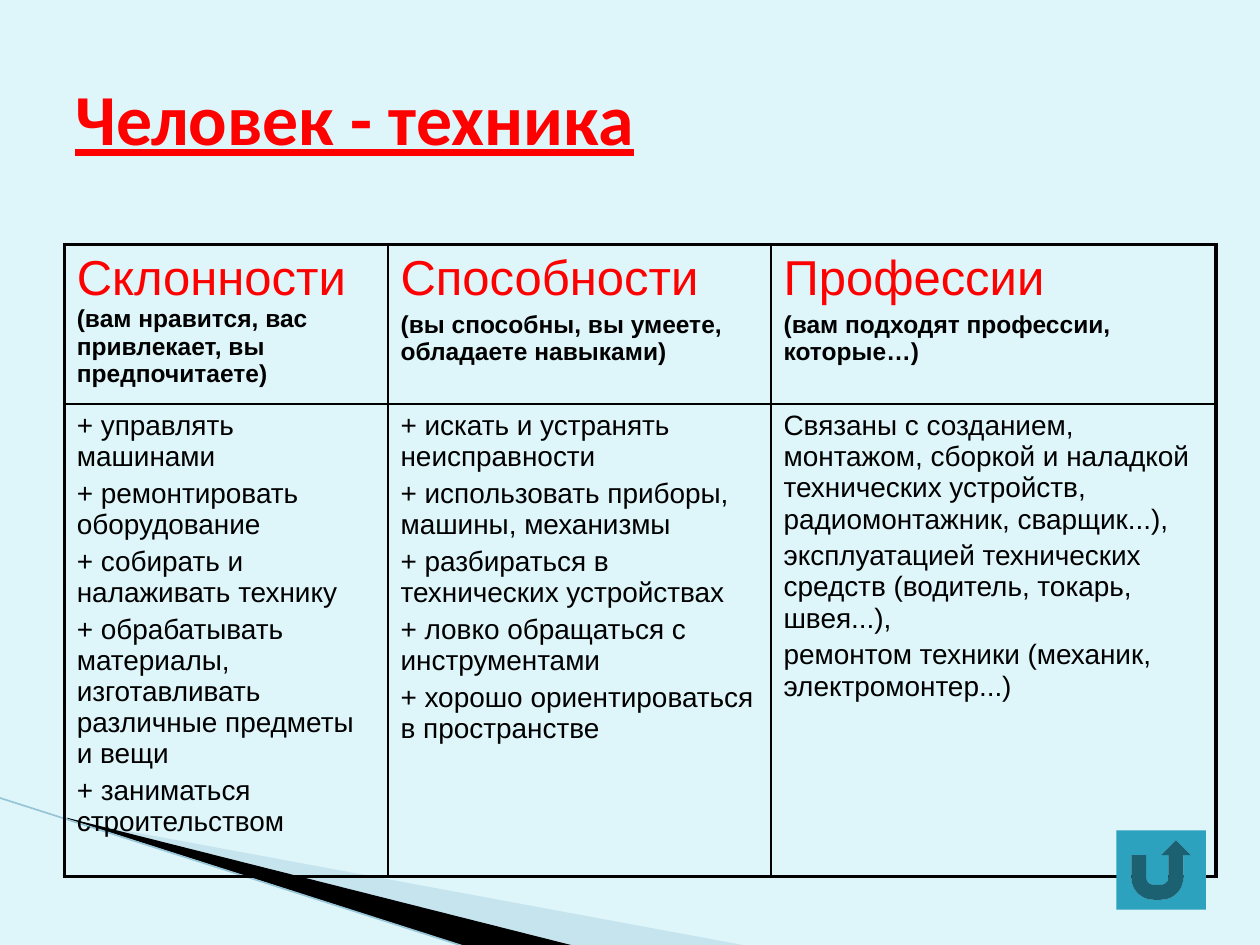
"""Build a slide on technical professions: a title, a three-column table and a return button."""
from lxml import etree
from pptx import Presentation
from pptx import util as u
from pptx.dml.color import RGBColor
from pptx.enum import shapes, text
from pptx.oxml import parse_xml
from pptx.oxml.ns import nsdecls, qn

Inches, Pt = u.Inches, u.Pt


def color(value):
    """Turn a hex string into a colour."""
    return RGBColor.from_string(value)


def add_border(cell, side, width):
    """Draw one black border of a cell."""
    cell._tc.get_or_add_tcPr().append(parse_xml(
        f'<a:ln{side} {nsdecls("a")} w="{Pt(width)}"><a:solidFill>'
        f'<a:srgbClr val="000000"/></a:solidFill></a:ln{side}>'))


deck = Presentation()
deck.slide_width, deck.slide_height = Inches(10), Inches(7.5)
page = deck.slides.add_slide(deck.slide_layouts[6])
page.background.fill.solid()
page.background.fill.fore_color.rgb = color("DEF5FA")

wedges = [
    ("A0CBDC", 40, [(0.55, 6.51), (5.95, 7.51), (4.56, 7.51), (0.55, 6.5)]),
    ("000000", 100, [(0.53, 6.49), (4.57, 7.51), (3.72, 7.52), (0.54, 6.5)]),
]
for fill, opacity, points in wedges:
    corners = [(Inches(x), Inches(y)) for x, y in points]
    outline = page.shapes.build_freeform(*corners[0])
    outline.add_line_segments(corners[1:], close=True)
    wedge = outline.convert_to_shape()
    wedge.shadow.inherit = False
    wedge.fill.solid()
    wedge.fill.fore_color.rgb = color(fill)
    wedge.line.fill.background()
    if opacity < 100:
        tint = wedge._element.spPr.find(qn("a:solidFill"))[0]
        etree.SubElement(tint, qn("a:alpha"), val=str(opacity * 1000))

edge = page.shapes.add_connector(
    shapes.MSO_CONNECTOR.STRAIGHT, Inches(-0.01), Inches(6.33), Inches(3.71), Inches(7.52))
edge.line.color.rgb = color("97C5D8")
edge.line.width = Pt(0.95)
etree.SubElement(edge._element.spPr, qn("a:effectLst"))

title = page.shapes.add_textbox(Inches(0.5), Inches(0.3), Inches(9), Inches(1.25))
title.text_frame.word_wrap = True
title.text_frame.vertical_anchor = text.MSO_ANCHOR.MIDDLE
para = title.text_frame.paragraphs[0]
para.text = "Человек - техника"
para.font.name, para.font.size = "Calibri", Pt(41)
para.font.bold = para.font.underline = True
para.font.color.rgb = color("FF0000")

heading, note, body = (28, False, "FF0000"), (14, True, "000000"), (16, False, "000000")
rows = [
    [
        [[("Склонности ", heading), ("(вам нравится, вас привлекает, вы предпочитаете)", note)]],
        [[("Способности", heading)], [("(вы способны, вы умеете, обладаете навыками)", note)]],
        [[("Профессии", heading)], [("(вам подходят профессии, которые…)", note)]],
    ],
    [[[(line, body)] for line in lines] for lines in [
        [
            "+ управлять машинами",
            "+ ремонтировать оборудование",
            "+ собирать и налаживать технику",
            "+ обрабатывать материалы, изготавливать различные предметы и вещи",
            "+ заниматься строительством",
        ],
        [
            "+ искать и устранять неисправности",
            "+ использовать приборы, машины, механизмы",
            "+ разбираться в технических устройствах",
            "+ ловко обращаться с инструментами",
            "+ хорошо ориентироваться в пространстве",
        ],
        [
            "Связаны с созданием, монтажом, сборкой и наладкой технических устройств, "
            "радиомонтажник, сварщик...),",
            "эксплуатацией технических средств (водитель, токарь, швея...),",
            "ремонтом техники (механик, электромонтер...)",
        ],
    ]],
]
widths, heights = [2.57, 3.04, 3.53], [1.19, 3.48]
table = page.shapes.add_table(
    len(heights), len(widths), Inches(0.51), Inches(1.94),
    Inches(sum(widths)), Inches(sum(heights))).table
table.first_row = table.horz_banding = False
for column, width in zip(table.columns, widths):
    column.width = Inches(width)
for row, height in zip(table.rows, heights):
    row.height = Inches(height)

for r, row in enumerate(rows):
    for c, paragraphs in enumerate(row):
        cell = table.cell(r, c)
        outer = {"L": c == 0, "R": c == len(widths) - 1, "T": r == 0, "B": r == len(heights) - 1}
        for side, is_outer in outer.items():
            add_border(cell, side, 2.25 if is_outer else 1)
        cell.fill.background()
        for index, spans in enumerate(paragraphs):
            para = cell.text_frame.paragraphs[0] if index == 0 else cell.text_frame.add_paragraph()
            para.space_before = Pt(3.3 if index else 0)
            para.font.name = "Arial"
            for wording, (size, bold, ink) in spans:
                span = para.add_run()
                span.text = wording
                span.font.size, span.font.bold = Pt(size), bold
                span.font.color.rgb = color(ink)

button = page.shapes.add_shape(
    shapes.MSO_SHAPE.ACTION_BUTTON_RETURN, Inches(8.86), Inches(6.59), Inches(0.71), Inches(0.63))
button.shadow.inherit = False
button.fill.solid()
button.fill.fore_color.rgb = color("2DA2BF")
button.line.fill.background()

deck.save("out.pptx")
